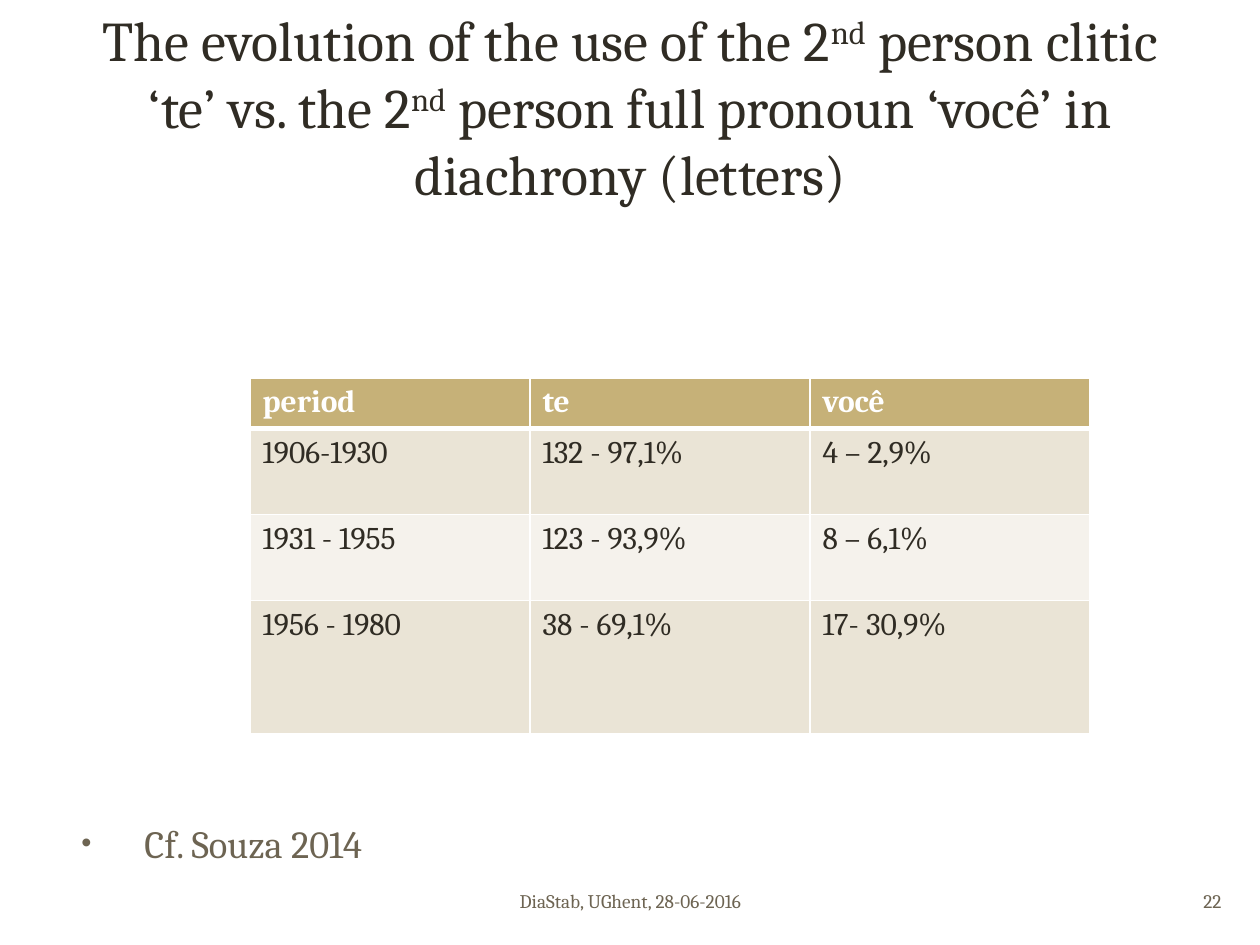
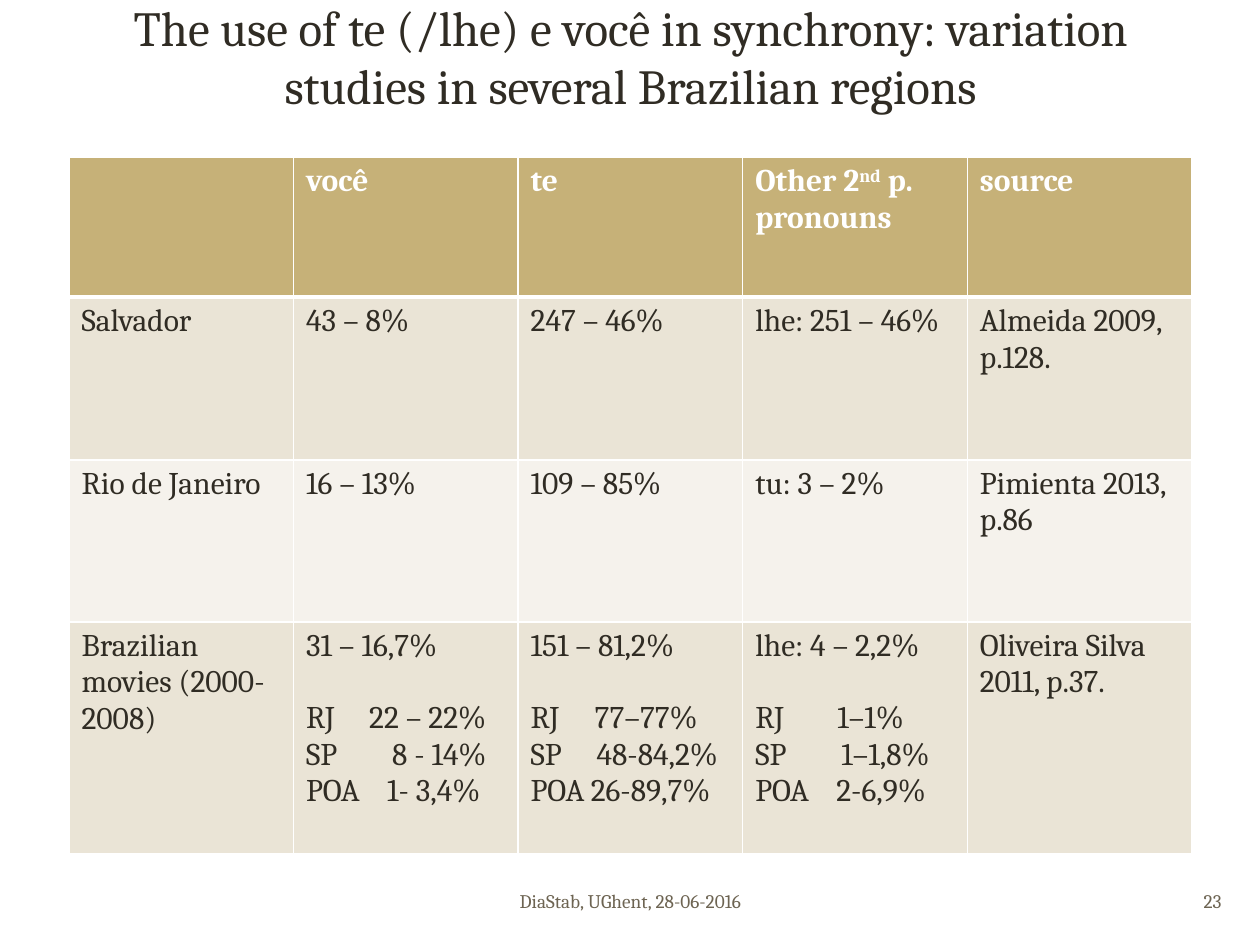
"""Builds two slides of tables on the pronouns te and você in diachrony and synchrony."""
from lxml.etree import SubElement
from pptx import Presentation
from pptx.dml.color import RGBColor
from pptx.enum.text import MSO_ANCHOR, PP_ALIGN
from pptx.oxml import parse_xml
from pptx.oxml.ns import nsdecls, qn
from pptx.util import Emu, Pt

FONT = "Cambria"
INK, MUTED, WHITE = "302C24", "6D6452", "FFFFFF"
HEADER_FILL, BAND_FILLS = "C6B178", ("EAE4D6", "F5F2EC")
FOOTER = "DiaStab, UGhent, 28-06-2016"
FOOTER_BOX, NUMBER_BOX = (431, 876, 399, 50), (940, 876, 294, 50)
CITATION_BOX = (69, 818, 1123, 50)
CITATION_INDENT = 63
BREAKDOWN_GAP = 36

SLIDES = [
    {
        "number": 22,
        "title": "The evolution of the use of the 2^nd^ person clitic ‘te’ vs. "
                 "the 2^nd^ person full pronoun ‘você’ in diachrony (letters)",
        "title_size": 32,
        "title_box": (69, 13, 1123, 200),
        "table_corner": (250, 378),
        "table_width": 840,
        "row_heights": (48, 86, 86, 133),
        "rows": [
            ("period", "te", "você"),
            ("1906-1930", "132 - 97,1%", "4 – 2,9%"),
            ("1931 - 1955", "123 - 93,9%", "8 – 6,1%"),
            ("1956 - 1980", "38 - 69,1%", "17- 30,9%"),
        ],
        "citation": "Cf. Souza 2014",
    },
    {
        "number": 23,
        "title": "The use of te (/lhe) e você in synchrony: variation studies "
                 "in several Brazilian regions",
        "title_size": 28,
        "title_box": (69, 13, 1123, 108),
        "table_corner": (69, 157),
        "table_width": 1123,
        "row_heights": (140, 163, 162, 232),
        "rows": [
            ("", "você", "te", "Other 2^nd^ p.\npronouns", "source"),
            ("Salvador", "43 – 8%", "247 – 46%", "lhe: 251 – 46%", "Almeida 2009, p.128."),
            ("Rio de Janeiro", "16 – 13%", "109 – 85%", "tu: 3 – 2%", "Pimienta 2013, p.86"),
            ("Brazilian movies (2000-2008)", "31 – 16,7%", "151 – 81,2%", "lhe: 4 – 2,2%",
             "Oliveira Silva 2011, p.37."),
        ],
        "breakdowns": {
            (3, 1): [("RJ", "22 – 22%", 63), ("SP", "8 - 14%", 86), ("POA", "1- 3,4%", 81)],
            (3, 2): [("RJ", "77–77%", 64), ("SP", "48-84,2%", 66), ("POA", "26-89,7%", 60)],
            (3, 3): [("RJ", "1–1%", 82), ("SP", "1–1,8%", 86), ("POA", "2-6,9%", 81)],
        },
    },
]


def px(length):
    return Emu(round(length * 914400 / 126))


def rgb(color):
    return RGBColor.from_string(color)


def write(paragraph, text, size, color, bold=False, align=PP_ALIGN.LEFT):
    for position, part in enumerate(text.split("^")):
        if part:
            run = paragraph.add_run()
            run.text = part
            if position % 2:
                run._r.get_or_add_rPr().set("baseline", "30000")
    paragraph.alignment = align
    font = paragraph.font
    font.name, font.size, font.bold = FONT, Pt(size), bold
    font.color.rgb = rgb(color)


def add_text(slide, box, text, size, color, align, anchor=MSO_ANCHOR.MIDDLE):
    frame = slide.shapes.add_textbox(*map(px, box)).text_frame
    frame.word_wrap = True
    frame.vertical_anchor = anchor
    write(frame.paragraphs[0], text, size, color, align=align)


def add_citation(slide, text):
    frame = slide.shapes.add_textbox(*map(px, CITATION_BOX)).text_frame
    frame.word_wrap = True
    frame.vertical_anchor = MSO_ANCHOR.MIDDLE
    paragraph = frame.paragraphs[0]
    properties = paragraph._p.get_or_add_pPr()
    properties.set("marL", str(px(CITATION_INDENT)))
    properties.set("indent", str(-px(CITATION_INDENT)))
    bullet_color = SubElement(properties, qn("a:buClr"))
    SubElement(bullet_color, qn("a:srgbClr"), val=MUTED)
    SubElement(properties, qn("a:buSzPct"), val="75000")
    SubElement(properties, qn("a:buFont"), typeface="Arial")
    SubElement(properties, qn("a:buChar"), char="•")
    write(paragraph, text, 22, MUTED)


def set_borders(cell, row):
    widths = {"L": 1, "R": 1, "T": 3 if row == 1 else 1, "B": 3 if row == 0 else 1}
    for position, (side, width) in enumerate(widths.items()):
        cell._tc.get_or_add_tcPr().insert(position, parse_xml(
            f'<a:ln{side} {nsdecls("a")} w="{Pt(width)}"><a:solidFill>'
            f'<a:srgbClr val="{WHITE}"/></a:solidFill></a:ln{side}>'))


def add_breakdown(frame, breakdown):
    for position, (region, share, stop) in enumerate(breakdown):
        paragraph = frame.add_paragraph()
        stops = SubElement(paragraph._p.get_or_add_pPr(), qn("a:tabLst"))
        SubElement(stops, qn("a:tab"), pos=str(px(stop)), algn="l")
        if position == 0:
            paragraph.space_before = px(BREAKDOWN_GAP)
        write(paragraph, f"{region}\t{share}", 18, INK)


def add_results(slide, content):
    rows, heights = content["rows"], content["row_heights"]
    columns = len(rows[0])
    table = slide.shapes.add_table(
        len(rows), columns, *map(px, content["table_corner"]),
        px(content["table_width"]), px(sum(heights))).table
    for column in table.columns:
        column.width = px(content["table_width"] / columns)
    for r, (row, height) in enumerate(zip(rows, heights)):
        table.rows[r].height = px(height)
        header = r == 0
        for c, text in enumerate(row):
            cell = table.cell(r, c)
            cell.fill.solid()
            cell.fill.fore_color.rgb = rgb(HEADER_FILL if header else BAND_FILLS[(r - 1) % 2])
            set_borders(cell, r)
            frame = cell.text_frame
            for position, line in enumerate(text.split("\n")):
                paragraph = frame.add_paragraph() if position else frame.paragraphs[0]
                write(paragraph, line, 18, WHITE if header else INK, bold=header)
            add_breakdown(frame, content.get("breakdowns", {}).get((r, c), []))


def main():
    deck = Presentation()
    deck.slide_width, deck.slide_height = px(1260), px(945)
    for content in SLIDES:
        slide = deck.slides.add_slide(deck.slide_layouts[6])
        add_text(slide, content["title_box"], content["title"], content["title_size"],
                 INK, PP_ALIGN.CENTER, MSO_ANCHOR.BOTTOM)
        add_results(slide, content)
        if "citation" in content:
            add_citation(slide, content["citation"])
        add_text(slide, FOOTER_BOX, FOOTER, 11, MUTED, PP_ALIGN.CENTER)
        add_text(slide, NUMBER_BOX, str(content["number"]), 11, MUTED, PP_ALIGN.RIGHT)
    deck.save("out.pptx")


if __name__ == "__main__":
    main()
